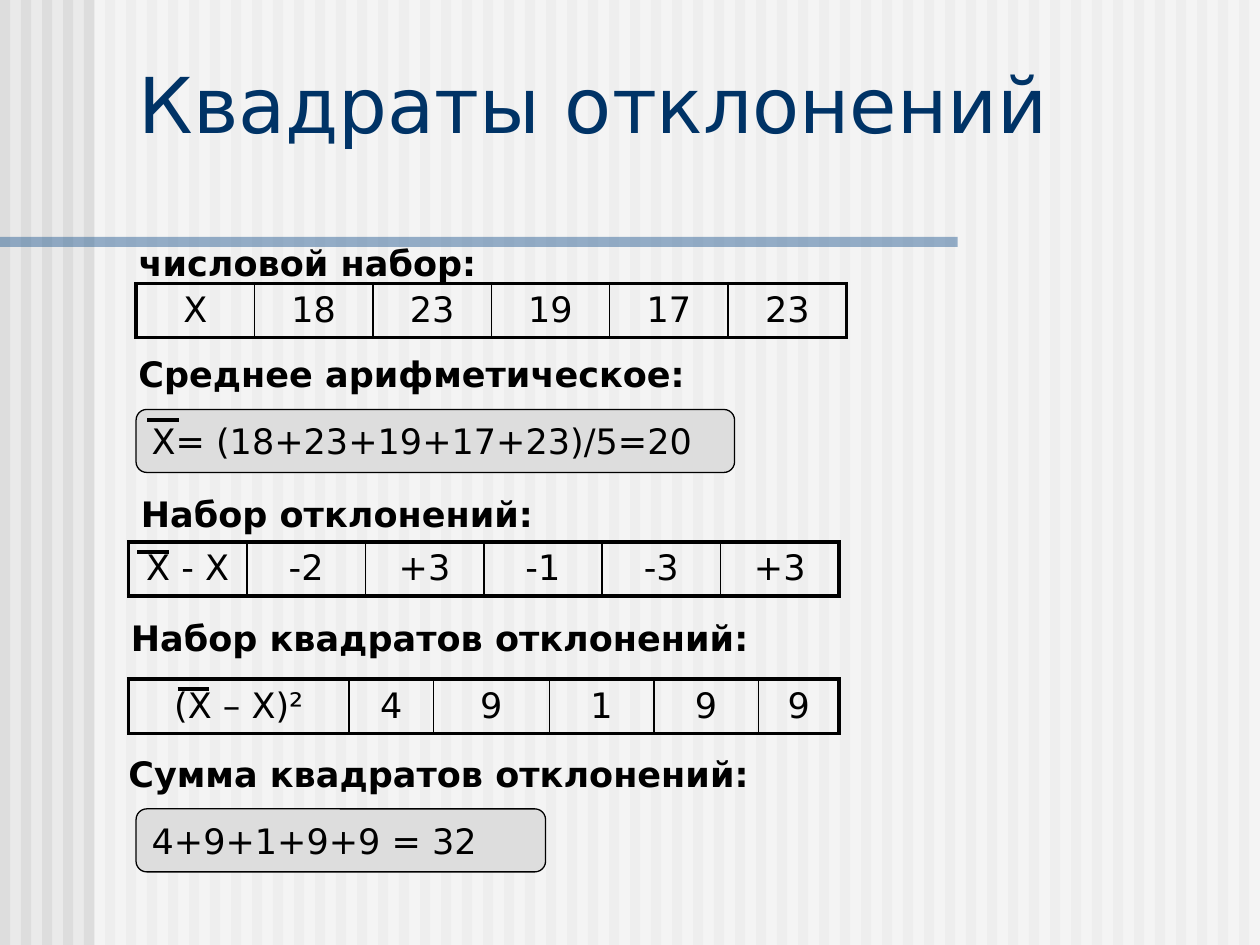
from dataclasses import dataclass

from lxml.etree import SubElement
from pptx import Presentation
from pptx.dml.color import RGBColor
from pptx.enum.shapes import MSO_CONNECTOR as Connector
from pptx.enum.shapes import MSO_SHAPE as Preset
from pptx.enum.text import MSO_ANCHOR as Anchor
from pptx.enum.text import MSO_AUTO_SIZE as AutoSize
from pptx.enum.text import PP_ALIGN as Align
from pptx.oxml import parse_xml
from pptx.oxml.ns import nsdecls, qn
from pptx.util import Inches, Pt

FONT = "DejaVu Sans"
BLACK = RGBColor(0x00, 0x00, 0x00)
WHITE = RGBColor(0xFF, 0xFF, 0xFF)
PAPER = RGBColor(0xEA, 0xEA, 0xEA)
GREY = RGBColor(0xDD, 0xDD, 0xDD)
NAVY = RGBColor(0x00, 0x33, 0x66)
BLUE = RGBColor(0x33, 0x66, 0x99)
STRIPES = 60
ROW_HEIGHT = 0.43
OUTER, INNER = 2.25, 1


@dataclass(frozen=True)
class Label:
    left: float
    top: float
    width: float
    text: str


@dataclass(frozen=True)
class Formula:
    top: float
    width: float
    text: str


@dataclass(frozen=True)
class NumberRow:
    left: float
    top: float
    widths: tuple[float, ...]
    values: tuple[str, ...]


@dataclass(frozen=True)
class MeanBar:
    left: float
    top: float


EQUAL_WIDTHS = (0.94,) * 6
LABELS = (
    Label(1, 2.75, 4.98, "Cреднее арифметическое:"),
    Label(1.02, 3.86, 3.67, "Набор отклонений:"),
    Label(0.94, 4.84, 5.75, "Набор квадратов отклонений:"),
    Label(0.92, 5.92, 5.75, "Сумма квадратов отклонений:"),
)
FORMULAS = (
    Formula(3.25, 4.75, "X= (18+23+19+17+23)/5=20"),
    Formula(6.42, 3.25, "4+9+1+9+9 = 32"),
)
NUMBER_ROWS = (
    NumberRow(1.08, 2.25, EQUAL_WIDTHS, ("X", "18", "23", "19", "17", "23")),
    NumberRow(1.02, 4.3, EQUAL_WIDTHS, ("X - X", "-2", "+3", "-1", "-3", "+3")),
    NumberRow(1.02, 5.39, (1.75, 0.67, 0.92, 0.83, 0.83, 0.64),
              ("(X – X)²", "4", "9", "1", "9", "9")),
)
MEAN_BARS = (MeanBar(1.17, 3.33), MeanBar(1.09, 4.38), MeanBar(1.41, 5.47))


def write(para, text: str, size: float = 20, color: RGBColor = BLACK,
          bold: bool = False, align: Align = Align.LEFT) -> None:
    para.text = text
    para.alignment = align
    para.font.name = FONT
    para.font.size = Pt(size)
    para.font.bold = bold
    para.font.color.rgb = color


def add_panel(page, left: float, top: float, width: float, height: float,
              color: RGBColor, preset: Preset = Preset.RECTANGLE):
    panel = page.shapes.add_shape(
        preset, Inches(left), Inches(top), Inches(width), Inches(height))
    panel.shadow.inherit = False
    panel.fill.solid()
    panel.fill.fore_color.rgb = color
    panel.line.fill.background()
    return panel


def make_half_clear(panel) -> None:
    tint = panel.element.spPr.find(qn("a:solidFill"))[0]
    SubElement(tint, qn("a:alpha"), val="50000")


def add_backdrop(page) -> None:
    page.background.fill.solid()
    page.background.fill.fore_color.rgb = PAPER
    for index in range(STRIPES):
        add_panel(page, index / 6, 0, 0.08, 7.5, GREY)
    make_half_clear(add_panel(page, 0.75, 0, 9.25, 7.5, WHITE))
    make_half_clear(add_panel(page, 0, 1.88, 7.6, 0.08, BLUE))


def fill_title(page) -> None:
    title = page.shapes.title
    title.element.getparent().append(title.element)
    title.left, title.top = Inches(1), Inches(0.31)
    title.width, title.height = Inches(8.93), Inches(1.99)
    frame = title.text_frame
    frame.auto_size = AutoSize.NONE
    frame.vertical_anchor = Anchor.BOTTOM
    write(frame.paragraphs[0], "Квадраты отклонений", 44, NAVY)
    caption = frame.add_paragraph()
    write(caption, "числовой набор:", bold=True)
    caption.space_before = Pt(53)


def add_label(page, label: Label) -> None:
    box = page.shapes.add_textbox(Inches(label.left), Inches(label.top),
                                  Inches(label.width), Inches(ROW_HEIGHT))
    box.text_frame.word_wrap = True
    write(box.text_frame.paragraphs[0], label.text, bold=True)


def add_formula(page, formula: Formula) -> None:
    panel = add_panel(page, 1.08, formula.top, formula.width, 0.5, GREY,
                      Preset.ROUNDED_RECTANGLE)
    panel.adjustments[0] = 0.17
    panel.line.color.rgb = BLACK
    panel.line.width = Pt(0.75)
    panel.text_frame.vertical_anchor = Anchor.MIDDLE
    write(panel.text_frame.paragraphs[0], formula.text)


def set_borders(cell, left: float, right: float) -> None:
    sides = {"lnL": left, "lnR": right, "lnT": OUTER, "lnB": OUTER}
    for index, (side, width) in enumerate(sides.items()):
        border = parse_xml(
            f'<a:{side} {nsdecls("a")} w="{Pt(width)}"><a:solidFill>'
            f'<a:srgbClr val="{BLACK}"/></a:solidFill></a:{side}>')
        cell._tc.get_or_add_tcPr().insert(index, border)


def add_number_row(page, row: NumberRow) -> None:
    table = page.shapes.add_table(
        1, len(row.values), Inches(row.left), Inches(row.top),
        Inches(sum(row.widths)), Inches(ROW_HEIGHT)).table
    table.first_row = table.horz_banding = False
    last = len(row.values) - 1
    for index, (width, value) in enumerate(zip(row.widths, row.values)):
        table.columns[index].width = Inches(width)
        cell = table.cell(0, index)
        cell.fill.background()
        set_borders(cell, OUTER if index == 0 else INNER,
                    OUTER if index == last else INNER)
        write(cell.text_frame.paragraphs[0], value, align=Align.CENTER)


def add_mean_bar(page, bar: MeanBar) -> None:
    line = page.shapes.add_connector(
        Connector.STRAIGHT, Inches(bar.left), Inches(bar.top),
        Inches(bar.left + 0.25), Inches(bar.top))
    line.line.color.rgb = BLACK
    line.line.width = Pt(2.25)
    SubElement(line.element.spPr, qn("a:effectLst"))


def main() -> None:
    deck = Presentation()
    deck.slide_width, deck.slide_height = Inches(10), Inches(7.5)
    page = deck.slides.add_slide(deck.slide_layouts[5])
    add_backdrop(page)
    fill_title(page)
    for row in NUMBER_ROWS:
        add_number_row(page, row)
    for formula in FORMULAS:
        add_formula(page, formula)
    for label in LABELS:
        add_label(page, label)
    for bar in MEAN_BARS:
        add_mean_bar(page, bar)
    deck.save("out.pptx")


if __name__ == "__main__":
    main()
